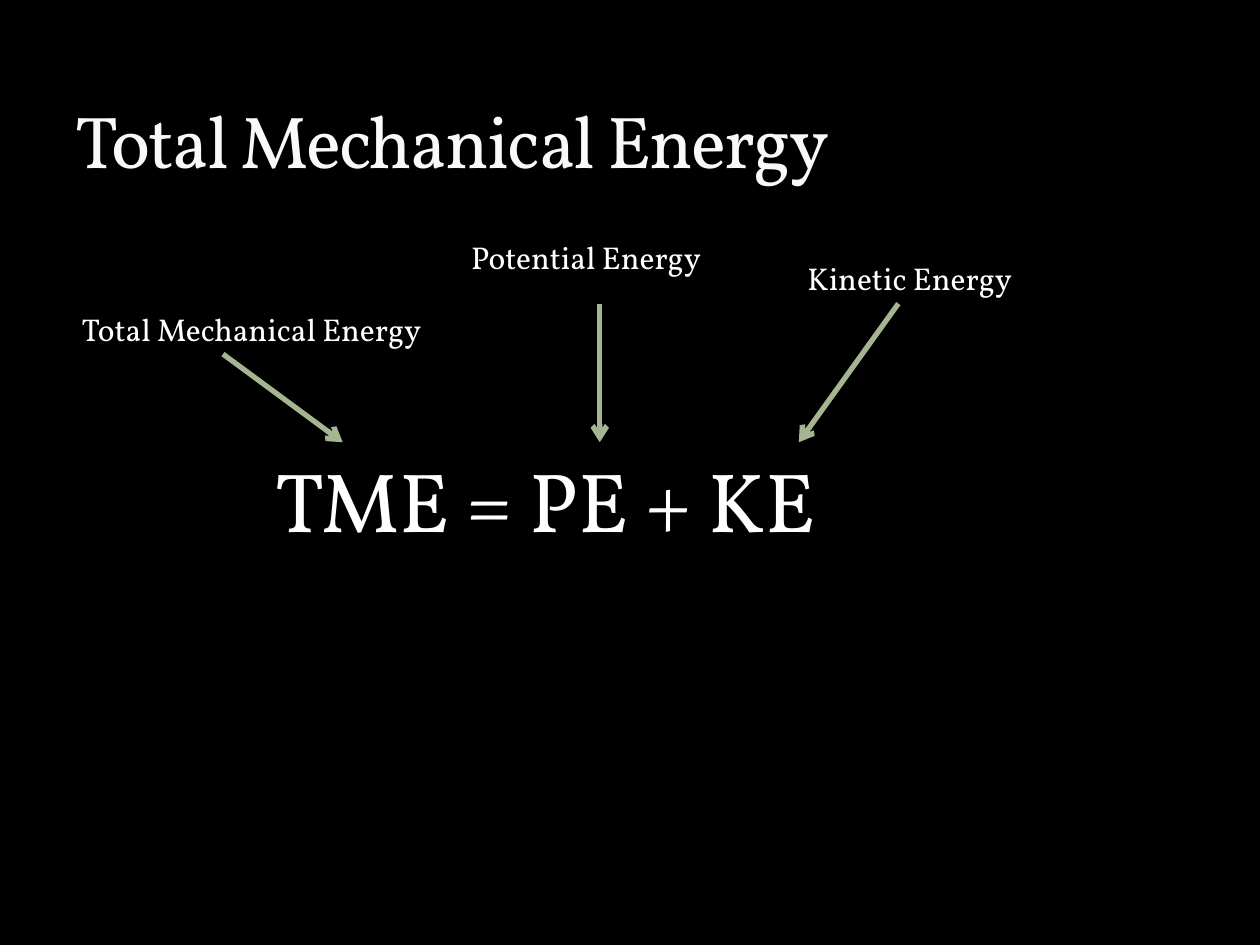
from lxml.etree import SubElement
from pptx import Presentation
from pptx.dml.color import RGBColor
from pptx.enum.shapes import MSO_CONNECTOR
from pptx.enum.text import MSO_ANCHOR
from pptx.oxml.ns import qn
from pptx.util import Inches, Pt

COLORS = {"background": "000000", "title": "F9F9F9", "text": "FFFFFF", "arrow": "A5B592"}
FONT = "Vollkorn"

prs = Presentation()
prs.slide_width, prs.slide_height = Inches(10), Inches(7.5)
W, H = prs.slide_width / 100, prs.slide_height / 100
s = prs.slides.add_slide(prs.slide_layouts[6])
s.background.fill.solid()
s.background.fill.fore_color.rgb = RGBColor.from_string(COLORS["background"])


def add_text(text, x, y, w, h, size, color="text"):
    tf = s.shapes.add_textbox(int(x * W), int(y * H), int(w * W), int(h * H)).text_frame
    tf.word_wrap = True
    p = tf.paragraphs[0]
    p.text = text
    p.font.name = FONT
    p.font.size = Pt(size)
    p.font.color.rgb = RGBColor.from_string(COLORS[color])
    return tf


title = add_text("Total Mechanical Energy", 5, 2.27, 90, 17.73, 42, "title")
title.vertical_anchor = MSO_ANCHOR.BOTTOM
title.paragraphs[0].runs[0].font._element.set("spc", "-100")

add_text("TME = PE + KE", 20.9, 46.8, 59.8, 12.13, 48)

ARROW_END = 46.8
terms = [
    ("Total Mechanical Energy", 5.5, 32.13, 33.9, (17.7, 37.47), 27.2),
    ("Potential Energy", 36.4, 24.53, 22.4, (47.6, 32.13), 47.6),
    ("Kinetic Energy", 63.1, 26.8, 18.9, (71.3, 32.13), 63.4),
]
for label, x, y, w, (start_x, start_y), end_x in terms:
    add_text(label, x, y, w, 5.33, 18)
    arrow = s.shapes.add_connector(
        MSO_CONNECTOR.STRAIGHT,
        int(start_x * W), int(start_y * H), int(end_x * W), int(ARROW_END * H),
    )
    arrow.line.width = Pt(3)
    arrow.line.color.rgb = RGBColor.from_string(COLORS["arrow"])
    SubElement(arrow.line._get_or_add_ln(), qn("a:tailEnd"), type="arrow")
    SubElement(arrow._element.spPr, qn("a:effectLst"))

prs.save("out.pptx")
